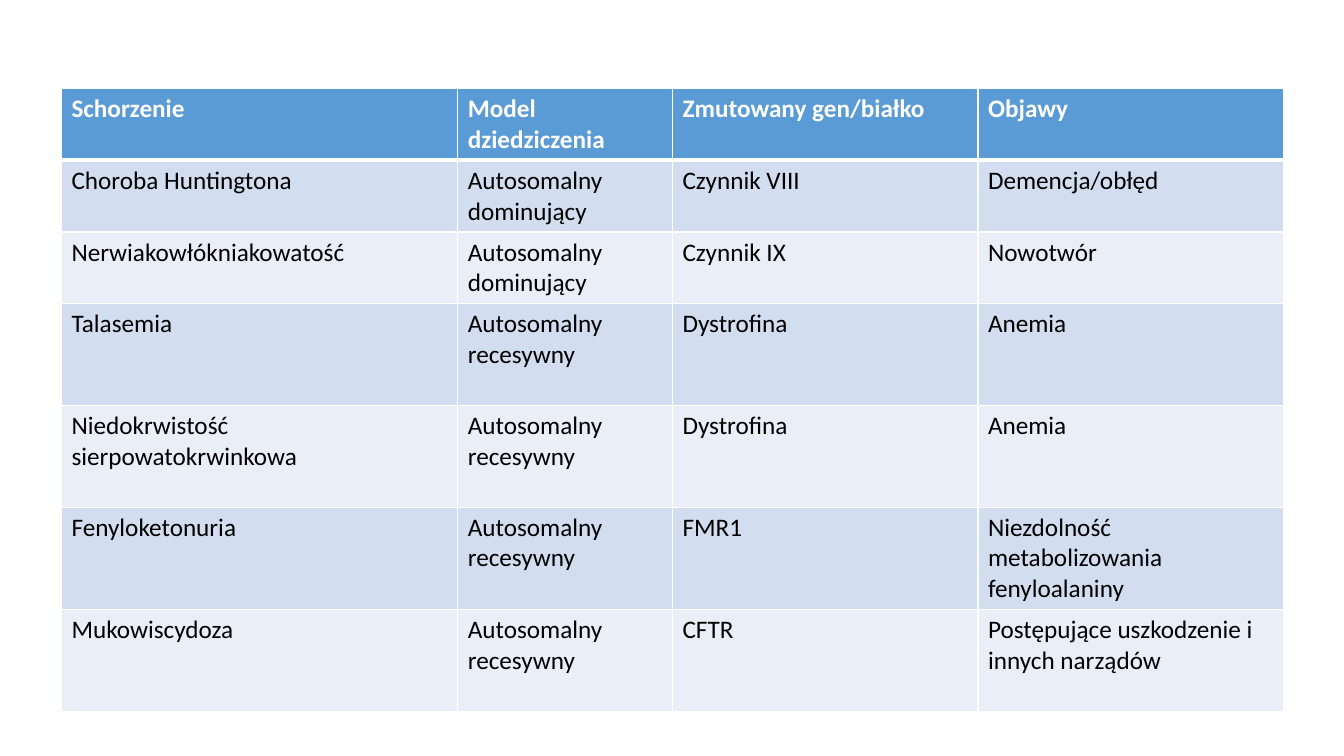
from dataclasses import dataclass

from lxml import etree
from pptx import Presentation
from pptx import util as u
from pptx.dml.color import RGBColor
from pptx.oxml import ns


@dataclass(frozen=True)
class Theme:
    font: str = "Calibri"
    size: int = 18
    head: str = "5B9BD5"
    bands: tuple = ("D2DEEF", "EAEFF7")
    light: str = "FFFFFF"
    dark: str = "000000"
    thin: int = 1
    thick: int = 3


def write(frame, words, *, font, size, color, bold=False):
    run = frame.paragraphs[0].add_run()
    run.text = words
    run.font.name = font
    run.font.size = u.Pt(size)
    run.font.bold = bold
    run.font.color.rgb = RGBColor.from_string(color)


class Deck:
    def __init__(self, theme):
        self.theme = theme
        self.file = Presentation()
        self.file.slide_width = u.Inches(13.33)
        self.file.slide_height = u.Inches(7.5)
        self.slide = self.file.slides.add_slide(self.file.slide_layouts[6])

    def edge(self, cell, widths):
        """Draw cell borders; widths maps each side (L, R, T, B) to points."""
        props = cell._tc.get_or_add_tcPr()
        for place, (side, width) in enumerate(widths.items()):
            line = etree.Element(ns.qn(f"a:ln{side}"), w=str(u.Pt(width)))
            fill = etree.SubElement(line, ns.qn("a:solidFill"))
            etree.SubElement(fill, ns.qn("a:srgbClr"), val=self.theme.light)
            props.insert(place, line)

    def cell(self, cell, words, row):
        look = self.theme
        head = row == 0
        fill = look.head if head else look.bands[(row - 1) % 2]
        cell.fill.solid()
        cell.fill.fore_color.rgb = RGBColor.from_string(fill)
        write(cell.text_frame, words, font=look.font, size=look.size,
              color=look.light if head else look.dark, bold=head)
        self.edge(cell, {
            "L": look.thin,
            "R": look.thin,
            "T": look.thick if row == 1 else look.thin,
            "B": look.thick if head else look.thin,
        })

    def table(self, rows, left, top, widths, heights):
        grid = self.slide.shapes.add_table(
            len(rows), len(widths), u.Inches(left), u.Inches(top),
            u.Inches(sum(widths)), u.Inches(sum(heights))).table
        for column, width in zip(grid.columns, widths):
            column.width = u.Inches(width)
        for line, height in zip(grid.rows, heights):
            line.height = u.Inches(height)
        for row, items in enumerate(rows):
            for col, words in enumerate(items):
                self.cell(grid.cell(row, col), words, row)


DOMINANT = "Autosomalny dominujący"
RECESSIVE = "Autosomalny recesywny"
DISEASES = [
    ("Schorzenie", "Model dziedziczenia", "Zmutowany gen/białko", "Objawy"),
    ("Choroba Huntingtona", DOMINANT, "Czynnik VIII", "Demencja/obłęd"),
    ("Nerwiakowłókniakowatość", DOMINANT, "Czynnik IX", "Nowotwór"),
    ("Talasemia", RECESSIVE, "Dystrofina", "Anemia"),
    ("Niedokrwistość sierpowatokrwinkowa", RECESSIVE, "Dystrofina", "Anemia"),
    ("Fenyloketonuria", RECESSIVE, "FMR1",
     "Niezdolność metabolizowania fenyloalaniny"),
    ("Mukowiscydoza", RECESSIVE, "CFTR",
     "Postępujące uszkodzenie i innych narządów"),
]


def main():
    deck = Deck(Theme())
    deck.table(DISEASES, 0.61, 0.88, widths=[3.93, 2.13, 3.03, 3.03],
               heights=[0.71] * 3 + [1.01] * 4)
    deck.file.save("out.pptx")


if __name__ == "__main__":
    main()
